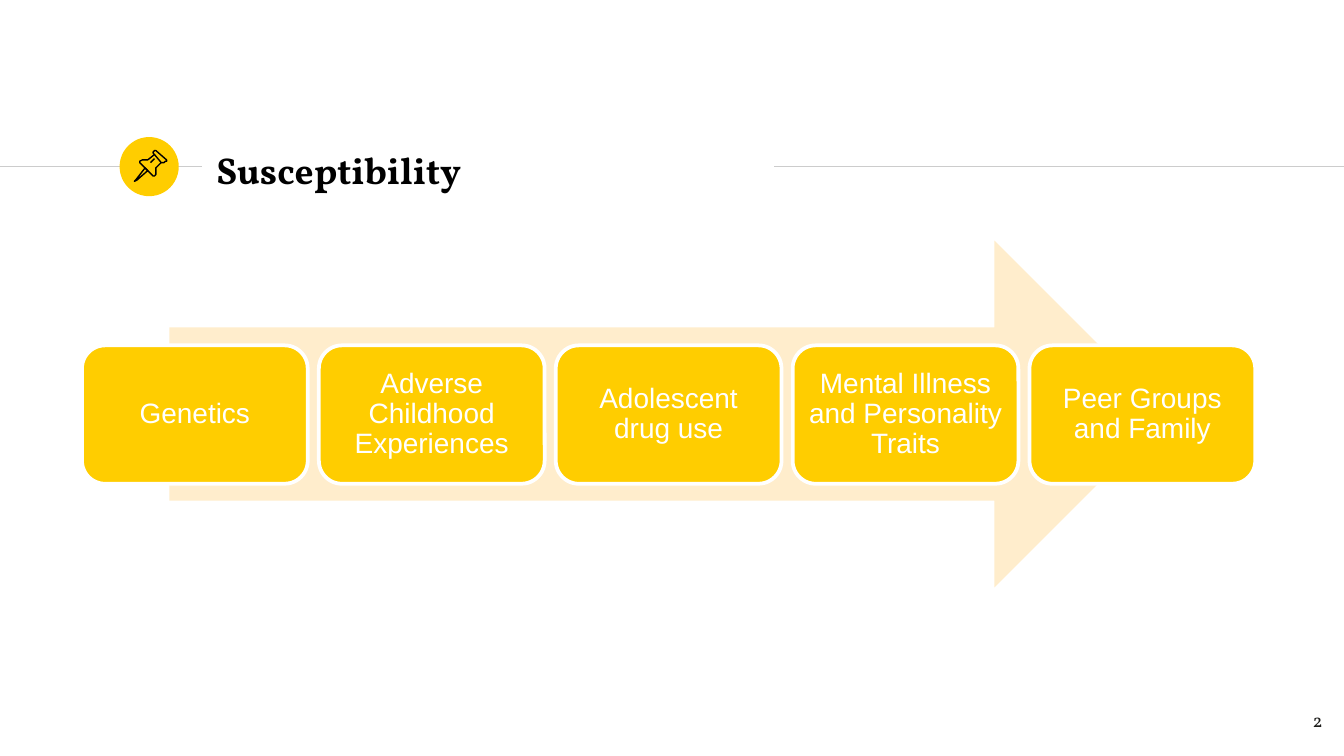
from dataclasses import dataclass

from lxml import etree
from pptx import Presentation
from pptx.dml.color import RGBColor
from pptx.enum.shapes import MSO_CONNECTOR, MSO_SHAPE
from pptx.enum.text import MSO_ANCHOR, PP_ALIGN
from pptx.oxml.ns import qn
from pptx.util import Inches, Pt


@dataclass(frozen=True)
class Theme:
    accent: str = "FFCD00"
    arrow: str = "FFEDCC"
    rule: str = "CCCCCC"
    ink: str = "000000"
    number: str = "1D1D1B"
    white: str = "FFFFFF"
    heading_font: str = "Vollkorn"
    body_font: str = "Arial"
    title_size: int = 20
    step_size: int = 15
    number_size: int = 10


theme = Theme()


def add_filled(kind, x, y, w, h, color):
    sp = slide.shapes.add_shape(kind, Inches(x), Inches(y), Inches(w), Inches(h))
    sp.shadow.inherit = False
    sp.fill.solid()
    sp.fill.fore_color.rgb = RGBColor.from_string(color)
    sp.line.fill.background()
    return sp


def set_text(sp, text, font, size, color, align, inset, anchor, bold=None):
    tf = sp.text_frame
    tf.word_wrap = True
    tf.vertical_anchor = anchor
    tf.margin_left = tf.margin_right = Inches(inset)
    tf.margin_top = tf.margin_bottom = Inches(inset)
    tf.text = text
    p = tf.paragraphs[0]
    p.alignment = align
    f = p.runs[0].font
    f.name, f.size, f.bold = font, Pt(size), bold
    f.color.rgb = RGBColor.from_string(color)
    return p


# Widescreen slide, 16:9
prs = Presentation()
prs.slide_width = Inches(10)
prs.slide_height = Inches(10 * 9 / 16)
slide = prs.slides.add_slide(prs.slide_layouts[5])

# Rules on both sides of the title
for x1, x2 in [(0, 1.5), (5.76, 10)]:
    rule = slide.shapes.add_connector(
        MSO_CONNECTOR.STRAIGHT, Inches(x1), Inches(1.24), Inches(x2), Inches(1.24))
    rule.line.color.rgb = RGBColor.from_string(theme.rule)
    rule.line.width = Pt(0.75)
    etree.SubElement(rule._element.spPr, qn("a:effectLst"))

# Title
title = slide.shapes.title
title.left, title.top = Inches(1.51), Inches(1.02)
title.width, title.height = Inches(4.24), Inches(0.48)
set_text(title, "Susceptibility", theme.heading_font, theme.title_size, theme.ink,
         PP_ALIGN.LEFT, 0.1, MSO_ANCHOR.MIDDLE, bold=True)

# Pushpin in a disc, outlines in hundredths of an inch
add_filled(MSO_SHAPE.OVAL, 0.89, 1.02, 0.44, 0.44, theme.accent)
needle = [(108, 125), (101, 134), (100, 135), (102, 134), (110, 127)]
cap = [(115, 115), (120, 121), (122, 121), (123, 120.5), (124, 120), (124, 119),
       (116, 112), (115, 112), (114, 113), (114, 114)]
body = [(115, 115), (110, 119), (108, 119), (106, 119), (104, 120), (104, 121),
        (114, 131), (115, 131), (116, 130), (116, 128), (116, 125), (120, 121)]
shine = [(112, 121), (115, 118)]
for points, closed in [(needle, True), (cap, True), (body, False), (shine, False)]:
    builder = slide.shapes.build_freeform(*points[0], scale=Inches(0.01))
    builder.add_line_segments(points[1:], close=closed)
    sp = builder.convert_to_shape()
    sp.shadow.inherit = False
    sp.fill.background()
    sp.line.color.rgb = RGBColor.from_string(theme.ink)
    sp.line.width = Pt(0.75)

# Slide number
number = slide.shapes.add_textbox(Inches(9.34), Inches(5.19), Inches(0.6), Inches(0.43))
set_text(number, "2", theme.heading_font, theme.number_size, theme.number,
         PP_ALIGN.RIGHT, 0.1, MSO_ANCHOR.TOP)

# Arrow behind the steps
add_filled(MSO_SHAPE.RIGHT_ARROW, 1.26, 1.79, 7.43, 2.58, theme.arrow)

# Steps, evenly spaced from the first left edge to the last
steps = ["Genetics", "Adverse Childhood Experiences", "Adolescent drug use",
         "Mental Illness and Personality Traits", "Peer Groups and Family"]
first, last = 0.61, 7.66
pitch = (last - first) / (len(steps) - 1)
for i, step in enumerate(steps):
    sp = add_filled(MSO_SHAPE.ROUNDED_RECTANGLE, first + i * pitch, 2.57, 1.68, 1.03,
                    theme.accent)
    sp.line.color.rgb = RGBColor.from_string(theme.white)
    sp.line.width = Pt(2)
    p = set_text(sp, step, theme.body_font, theme.step_size, theme.white,
                 PP_ALIGN.CENTER, 0.06, MSO_ANCHOR.MIDDLE)
    p.line_spacing = 0.9

prs.save("out.pptx")
